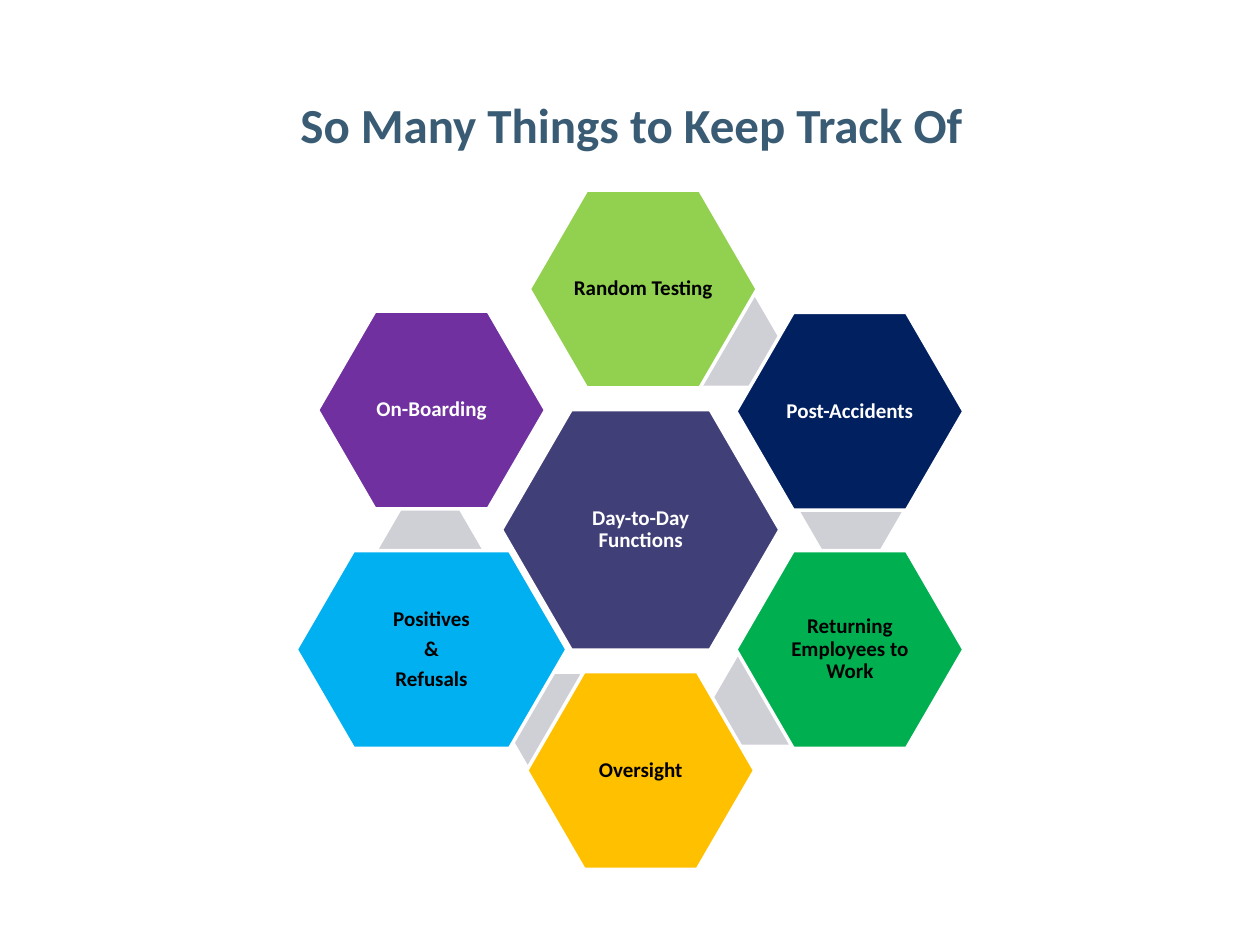
from dataclasses import dataclass

import pptx
import pptx.dml.color
import pptx.enum.shapes
import pptx.enum.text
import pptx.util

Inches = pptx.util.Inches
Pt = pptx.util.Pt
RGBColor = pptx.dml.color.RGBColor

WHITE = RGBColor(0xFF, 0xFF, 0xFF)
BLACK = RGBColor(0x00, 0x00, 0x00)
SLATE = RGBColor(0x39, 0x5B, 0x74)
INDIGO = RGBColor(0x41, 0x3F, 0x77)
LINK_GREY = RGBColor(0xCF, 0xCF, 0xD6)
LIME = RGBColor(0x92, 0xD0, 0x50)
NAVY = RGBColor(0x00, 0x20, 0x60)
GREEN = RGBColor(0x00, 0xB0, 0x50)
AMBER = RGBColor(0xFF, 0xC0, 0x00)
SKY = RGBColor(0x00, 0xB0, 0xF0)
PURPLE = RGBColor(0x70, 0x30, 0xA0)

FONT = "Calibri"
DUTY_WIDTH, DUTY_HEIGHT = 1.81, 1.57
LINK_WIDTH, LINK_HEIGHT = 0.83, 0.72


@dataclass
class Duty:
    lines: tuple[str, ...]
    left: float
    top: float
    fill: RGBColor
    ink: RGBColor = BLACK
    width: float = DUTY_WIDTH
    height: float = DUTY_HEIGHT
    link: tuple[float, float] | None = None  # left, top of the grey piece behind


DUTIES = [
    Duty(("Day-to-Day Functions",), 3.98, 3.25, INDIGO, WHITE, 2.21, 1.91),
    Duty(("Random Testing",), 4.2, 1.51, LIME, link=(5.36, 2.34)),
    Duty(("Post-Accidents",), 5.84, 2.48, NAVY, WHITE, link=(6.34, 3.68)),
    Duty(("Returning Employees to Work",), 5.84, 4.37, GREEN, link=(5.66, 5.19)),
    Duty(("Oversight",), 4.18, 5.33, AMBER, link=(3.98, 5.35)),
    Duty(("Positives", "&", "Refusals"), 2.35, 4.37, SKY, width=2.15, link=(3, 4.01)),
    Duty(("On-Boarding",), 2.52, 2.47, PURPLE, WHITE),
]


def add_run(paragraph, text: str, size: float, color: RGBColor) -> None:
    run = paragraph.add_run()
    run.text = text
    run.font.name = FONT
    run.font.size = Pt(size)
    run.font.bold = True
    run.font.color.rgb = color


def add_hexagon(shapes, left: float, top: float, width: float, height: float,
                fill: RGBColor):
    hexagon = shapes.add_shape(
        pptx.enum.shapes.MSO_SHAPE.HEXAGON,
        Inches(left), Inches(top), Inches(width), Inches(height))
    hexagon.adjustments[0] = 0.29
    hexagon.shadow.inherit = False
    hexagon.fill.solid()
    hexagon.fill.fore_color.rgb = fill
    hexagon.line.fill.background()
    return hexagon


def add_duty(shapes, duty: Duty) -> None:
    """Draw the grey link, if any, and the labelled hexagon over it."""
    if duty.link:
        add_hexagon(shapes, *duty.link, LINK_WIDTH, LINK_HEIGHT, LINK_GREY)
    hexagon = add_hexagon(shapes, duty.left, duty.top, duty.width, duty.height,
                          duty.fill)
    hexagon.line.color.rgb = WHITE
    hexagon.line.width = Pt(2)
    label = hexagon.text_frame
    label.word_wrap = True
    label.vertical_anchor = pptx.enum.text.MSO_ANCHOR.MIDDLE
    label.margin_left = label.margin_right = Inches(0.02)
    label.margin_top = label.margin_bottom = Inches(0.02)
    for index, line in enumerate(duty.lines):
        paragraph = label.add_paragraph() if index else label.paragraphs[0]
        paragraph.alignment = pptx.enum.text.PP_ALIGN.CENTER
        paragraph.line_spacing = 0.9
        paragraph.space_after = Pt(4.2)
        add_run(paragraph, line, 12, duty.ink)


def add_title(slide, text: str) -> None:
    title = slide.shapes.title
    title.left, title.top = Inches(0.51), Inches(0.45)
    title.width, title.height = Inches(9), Inches(1.07)
    title.text_frame.vertical_anchor = pptx.enum.text.MSO_ANCHOR.MIDDLE
    heading = title.text_frame.paragraphs[0]
    heading.alignment = pptx.enum.text.PP_ALIGN.CENTER
    add_run(heading, text, 28, SLATE)


def main() -> None:
    presentation = pptx.Presentation()
    presentation.slide_width = Inches(10)
    presentation.slide_height = Inches(7.5)
    slide = presentation.slides.add_slide(presentation.slide_layouts[5])
    add_title(slide, "So Many Things to Keep Track Of")
    honeycomb = slide.shapes.add_group_shape()
    for duty in DUTIES:
        add_duty(honeycomb.shapes, duty)
    presentation.save("out.pptx")


if __name__ == "__main__":
    main()
